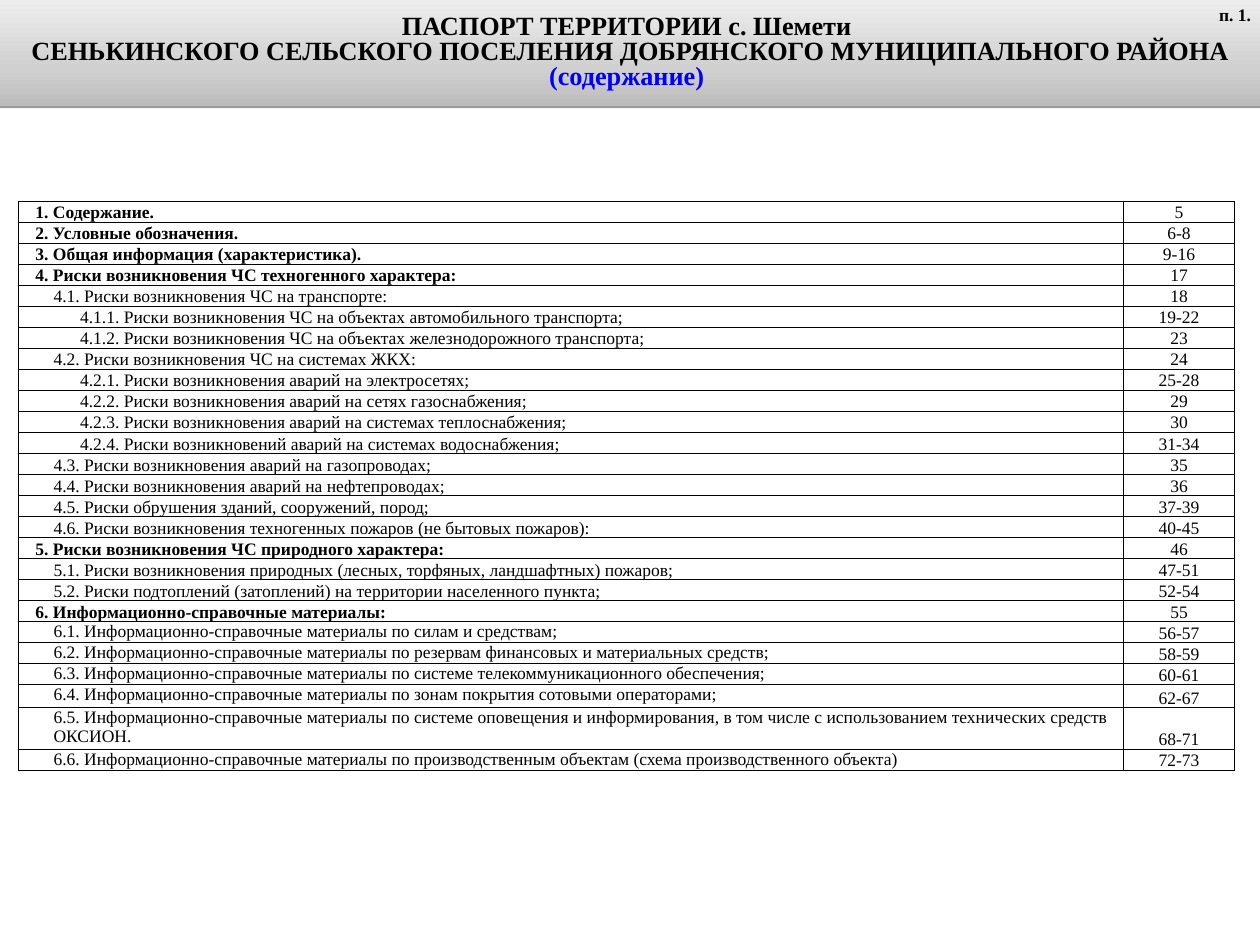
from lxml import etree
from pptx import Presentation
from pptx.dml.color import RGBColor
from pptx.enum.shapes import MSO_SHAPE
from pptx.enum.text import MSO_ANCHOR, MSO_AUTO_SIZE, PP_ALIGN
from pptx.oxml.ns import qn
from pptx.util import Cm, Pt

RECTANGLE = MSO_SHAPE.RECTANGLE
TOP, MIDDLE, BOTTOM = MSO_ANCHOR.TOP, MSO_ANCHOR.MIDDLE, MSO_ANCHOR.BOTTOM
LEFT, CENTER, RIGHT = PP_ALIGN.LEFT, PP_ALIGN.CENTER, PP_ALIGN.RIGHT
FIT_SHAPE = MSO_AUTO_SIZE.SHAPE_TO_FIT_TEXT

FONT = "Times New Roman"
BLACK, WHITE, BLUE = "000000", "FFFFFF", "0000FF"
SLIDE_WIDTH, SLIDE_HEIGHT = Cm(35.56), Cm(26.67)
COLUMN_WIDTHS = [Cm(31.19), Cm(3.15)]
ROW_HEIGHT = Cm(14.24 / 24)
TALL_ROWS = {"6.4.": Cm(0.65), "6.5.": Cm(1.18)}
LEVEL_INDENTS = {1: Cm(0.49), 2: Cm(1), 3: Cm(1.75)}
BAND_STOPS = [(0, "BCBCBC"), (35, "D0D0D0"), (100, "EDEDED")]

TITLE_LINES = [
    ("ПАСПОРТ ТЕРРИТОРИИ с. Шемети ", BLACK),
    ("СЕНЬКИНСКОГО СЕЛЬСКОГО ПОСЕЛЕНИЯ ДОБРЯНСКОГО МУНИЦИПАЛЬНОГО РАЙОНА", BLACK),
    ("(содержание) ", BLUE),
]
CONTENTS = [
    ("1. Содержание.", "5"),
    ("2. Условные обозначения.", "6-8"),
    ("3. Общая информация (характеристика).", "9-16"),
    ("4. Риски возникновения ЧС техногенного характера:", "17"),
    ("4.1. Риски возникновения ЧС на транспорте:", "18"),
    ("4.1.1. Риски возникновения ЧС на объектах автомобильного транспорта;", "19-22"),
    ("4.1.2. Риски возникновения ЧС на объектах железнодорожного транспорта;", "23"),
    ("4.2. Риски возникновения ЧС на системах ЖКХ:", "24"),
    ("4.2.1. Риски возникновения аварий на электросетях;", "25-28"),
    ("4.2.2. Риски возникновения аварий на сетях газоснабжения;", "29"),
    ("4.2.3. Риски возникновения аварий на системах теплоснабжения;", "30"),
    ("4.2.4. Риски возникновений аварий на системах водоснабжения;", "31-34"),
    ("4.3. Риски возникновения аварий на газопроводах;", "35"),
    ("4.4. Риски возникновения аварий на нефтепроводах;", "36"),
    ("4.5. Риски обрушения зданий, сооружений, пород;", "37-39"),
    ("4.6. Риски возникновения техногенных пожаров (не бытовых пожаров):", "40-45"),
    ("5. Риски возникновения ЧС природного характера:", "46"),
    ("5.1. Риски возникновения природных (лесных, торфяных, ландшафтных) пожаров;", "47-51"),
    ("5.2. Риски подтоплений (затоплений) на территории населенного пункта;", "52-54"),
    ("6. Информационно-справочные материалы:", "55"),
    ("6.1. Информационно-справочные материалы по силам и средствам;", "56-57"),
    ("6.2. Информационно-справочные материалы по резервам финансовых и материальных средств;", "58-59"),
    ("6.3. Информационно-справочные материалы по системе телекоммуникационного обеспечения;", "60-61"),
    ("6.4. Информационно-справочные материалы по зонам покрытия сотовыми операторами;", "62-67"),
    ("6.5. Информационно-справочные материалы по системе оповещения и информирования, "
     "в том числе с использованием технических средств ОКСИОН.", "68-71"),
    ("6.6. Информационно-справочные материалы по производственным объектам "
     "(схема производственного объекта)", "72-73"),
]


def rgb(color):
    return RGBColor.from_string(color)


def format_paragraph(paragraph, size, align, bold=False, color=BLACK):
    paragraph.alignment = align
    for run in paragraph.runs:
        run.font.name = FONT
        run.font.size = Pt(size)
        run.font.bold = bold
        run.font.color.rgb = rgb(color)


def add_color(parent, color, alpha=None):
    element = etree.SubElement(parent, qn("a:srgbClr"), val=color)
    if alpha is not None:
        etree.SubElement(element, qn("a:alpha"), val=str(alpha * 1000))


def fill_band(shape):
    shape.fill.gradient()
    shape.fill.gradient_angle = 90
    stop_list = shape.element.spPr.find(".//" + qn("a:gsLst"))
    for stop in list(stop_list):
        stop_list.remove(stop)
    for position, color in BAND_STOPS:
        add_color(etree.SubElement(stop_list, qn("a:gs"), pos=str(position * 1000)), color)


def add_bottom_shadow(shape):
    shape.shadow.inherit = False
    effects = shape.element.spPr.find(qn("a:effectLst"))
    shadow = etree.SubElement(effects, qn("a:outerShdw"), blurRad="0",
                              dist=str(Pt(1.6)), dir="5400000", rotWithShape="0")
    add_color(shadow, BLACK, 38)


def add_title_band(slide):
    shape = slide.shapes.add_shape(RECTANGLE, 0, 0, SLIDE_WIDTH, Cm(3))
    fill_band(shape)
    shape.line.fill.background()
    add_bottom_shadow(shape)
    frame = shape.text_frame
    frame.word_wrap = True
    frame.vertical_anchor = MIDDLE
    frame.text = "\n".join(text for text, _ in TITLE_LINES)
    for paragraph, (_, color) in zip(frame.paragraphs, TITLE_LINES):
        format_paragraph(paragraph, 21, CENTER, True, color)
        paragraph.line_spacing = 0.8


def add_page_mark(slide):
    width = Cm(2)
    box = slide.shapes.add_textbox(SLIDE_WIDTH - width, 0, width, Cm(0.85))
    frame = box.text_frame
    frame.word_wrap = True
    frame.auto_size = FIT_SHAPE
    frame.text = "п. 1."
    format_paragraph(frame.paragraphs[0], 14, RIGHT, True)


def add_borders(cell):
    properties = cell._tc.get_or_add_tcPr()
    for index, side in enumerate(("a:lnL", "a:lnR", "a:lnT", "a:lnB")):
        line = etree.Element(qn(side), w=str(Pt(1)))
        add_color(etree.SubElement(line, qn("a:solidFill")), BLACK)
        properties.insert(index, line)


def fill_cell(cell, text, anchor, align, bold=False):
    cell.margin_left = cell.margin_right = cell.margin_top = cell.margin_bottom = 0
    cell.vertical_anchor = anchor
    cell.fill.solid()
    cell.fill.fore_color.rgb = rgb(WHITE)
    add_borders(cell)
    cell.text = text
    format_paragraph(cell.text_frame.paragraphs[0], 14, align, bold)


def add_contents_table(slide):
    table = slide.shapes.add_table(len(CONTENTS), 2, Cm(0.51), Cm(5.69),
                                   sum(COLUMN_WIDTHS), ROW_HEIGHT * len(CONTENTS)).table
    table.first_row = table.horz_banding = False
    for column, width in zip(table.columns, COLUMN_WIDTHS):
        column.width = width
    for row, (title, pages) in zip(table.rows, CONTENTS):
        number = title.split()[0]
        level = number.count(".")
        row.height = TALL_ROWS.get(number, ROW_HEIGHT)
        title_cell, pages_cell = row.cells
        anchor = TOP if number.startswith("6.") and level == 2 else BOTTOM
        fill_cell(title_cell, title, anchor, LEFT, level == 1)
        fill_cell(pages_cell, pages, BOTTOM, CENTER)
        properties = title_cell.text_frame.paragraphs[0]._p.get_or_add_pPr()
        properties.set("marL", str(LEVEL_INDENTS[level]))
        properties.set("indent", "0")


def main():
    presentation = Presentation()
    presentation.slide_width = SLIDE_WIDTH
    presentation.slide_height = SLIDE_HEIGHT
    slide = presentation.slides.add_slide(presentation.slide_layouts[6])
    add_contents_table(slide)
    add_title_band(slide)
    add_page_mark(slide)
    presentation.save("out.pptx")


if __name__ == "__main__":
    main()
